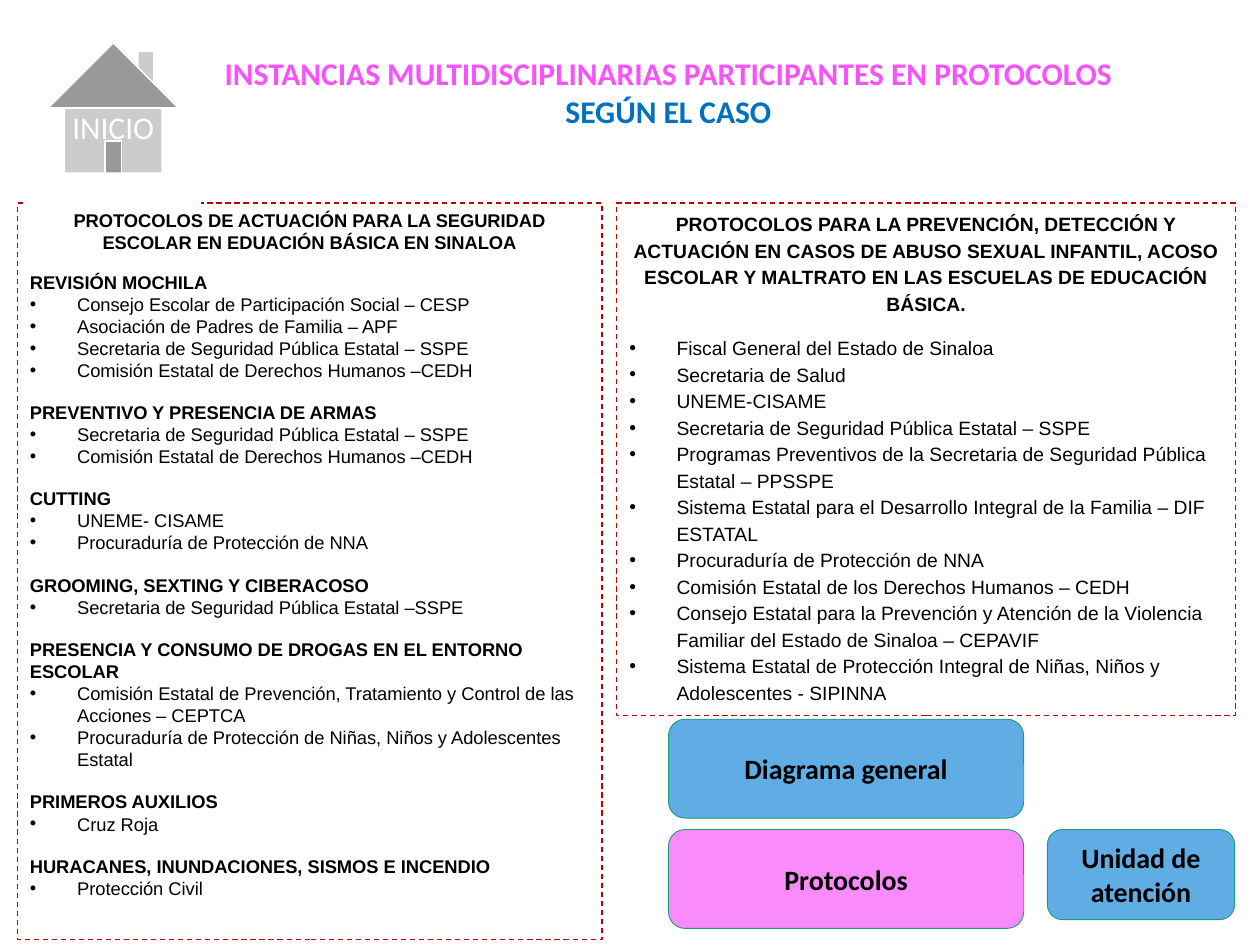
from lxml.etree import SubElement
from pptx import Presentation
from pptx.dml.color import RGBColor
from pptx.enum.dml import MSO_LINE_DASH_STYLE as Dash
from pptx.enum.shapes import MSO_SHAPE as Shape
from pptx.enum.text import MSO_ANCHOR as Anchor, MSO_AUTO_SIZE as AutoSize, PP_ALIGN as Align
from pptx.oxml.ns import qn
from pptx.util import Pt

BLACK, WHITE, RED, GREEN = "000000", "FFFFFF", "C00000", "1D9A78"
PINK, BLUE, SKY, ORCHID = "F852FC", "0070C0", "5FADE4", "FA8BFD"

TITLE = [("INSTANCIAS MULTIDISCIPLINARIAS PARTICIPANTES EN PROTOCOLOS", PINK),
         ("SEGÚN EL CASO", BLUE)]
SAFETY_HEADING = "PROTOCOLOS DE ACTUACIÓN PARA LA SEGURIDAD ESCOLAR EN EDUACIÓN BÁSICA EN SINALOA"
SAFETY = [
    ("REVISIÓN MOCHILA", [
        "Consejo Escolar de Participación Social – CESP",
        "Asociación de Padres de Familia – APF",
        "Secretaria de Seguridad Pública Estatal – SSPE",
        "Comisión Estatal de Derechos Humanos –CEDH"]),
    ("PREVENTIVO Y PRESENCIA DE ARMAS", [
        "Secretaria de Seguridad Pública Estatal – SSPE",
        "Comisión Estatal de Derechos Humanos –CEDH"]),
    ("CUTTING", ["UNEME- CISAME", "Procuraduría de Protección de NNA"]),
    ("GROOMING, SEXTING Y CIBERACOSO", ["Secretaria de Seguridad Pública Estatal –SSPE"]),
    ("PRESENCIA Y CONSUMO DE DROGAS EN EL ENTORNO ESCOLAR", [
        "Comisión Estatal de Prevención, Tratamiento y Control de las Acciones – CEPTCA",
        "Procuraduría de Protección de Niñas, Niños y Adolescentes Estatal"]),
    ("PRIMEROS AUXILIOS", ["Cruz Roja"]),
    ("HURACANES, INUNDACIONES, SISMOS E INCENDIO", ["Protección Civil"]),
]
ABUSE_HEADING = ("PROTOCOLOS PARA LA PREVENCIÓN, DETECCIÓN Y ACTUACIÓN EN CASOS DE ABUSO SEXUAL "
                 "INFANTIL, ACOSO ESCOLAR Y MALTRATO EN LAS ESCUELAS DE EDUCACIÓN BÁSICA.")
ABUSE = [
    "Fiscal General del Estado de Sinaloa",
    "Secretaria de Salud",
    "UNEME-CISAME",
    "Secretaria de Seguridad Pública Estatal – SSPE",
    "Programas Preventivos de la Secretaria de Seguridad Pública Estatal – PPSSPE",
    "Sistema Estatal para el Desarrollo Integral de la Familia – DIF ESTATAL",
    "Procuraduría de Protección de NNA",
    "Comisión Estatal de los Derechos Humanos – CEDH",
    "Consejo Estatal para la Prevención y Atención de la Violencia Familiar del Estado de Sinaloa – CEPAVIF",
    "Sistema Estatal de Protección Integral de Niñas, Niños y Adolescentes - SIPINNA",
]
BUTTONS = [("Diagrama general", SKY, (382, 411, 203, 56.5)),
           ("Unidad de atención", SKY, (598.5, 474, 107, 51.5)),
           ("Protocolos", ORCHID, (382, 474, 203, 56.5))]


def rgb(value):
    """Return the colour for a hex string."""
    return RGBColor.from_string(value)


def add_run(p, text, size, font, color=BLACK, bold=False):
    """Add one formatted run to a paragraph."""
    r = p.add_run()
    r.text = text
    r.font.size, r.font.name, r.font.bold = Pt(size), font, bold
    r.font.color.rgb = rgb(color)


def add_bullet(p, indent=27):
    """Give a paragraph a hanging bullet."""
    pPr = p._p.get_or_add_pPr()
    pPr.set("marL", str(Pt(indent)))
    pPr.set("indent", str(-Pt(indent)))
    SubElement(pPr, qn("a:buFont"), typeface="Arial")
    SubElement(pPr, qn("a:buChar"), char="•")


def add_box(slide, kind, box, line, width, fill=None, anchor=Anchor.MIDDLE):
    """Add a preset shape in the given box."""
    sp = slide.shapes.add_shape(kind, *map(Pt, box))
    sp.shadow.inherit = False
    if fill:
        sp.fill.solid()
        sp.fill.fore_color.rgb = rgb(fill)
    else:
        sp.fill.background()
    sp.line.color.rgb = rgb(line)
    sp.line.width = Pt(width)
    sp.text_frame.word_wrap = True
    sp.text_frame.vertical_anchor = anchor
    return sp


def add_title(slide, box):
    """Place the two-line title."""
    title = slide.shapes.title
    title.left, title.top, title.width, title.height = map(Pt, box)
    tf = title.text_frame
    tf.word_wrap, tf.auto_size, tf.vertical_anchor = True, AutoSize.NONE, Anchor.TOP
    for i, (text, color) in enumerate(TITLE):
        p = tf.add_paragraph() if i else tf.paragraphs[0]
        p.alignment = Align.CENTER
        add_run(p, text, 18, "Calibri", color, True)


def add_panel(slide, box, heading, groups, size, spacing=1.0):
    """Place a dashed panel with a heading and groups of bullets."""
    sp = add_box(slide, Shape.RECTANGLE, box, RED, 0.75, anchor=Anchor.TOP)
    sp.line.dash_style = Dash.DASH
    tf = sp.text_frame
    p = tf.paragraphs[0]
    p.alignment, p.line_spacing, p.space_after = Align.CENTER, spacing, Pt(10)
    add_run(p, heading, size, "Arial", bold=True)
    for i, (subheading, items) in enumerate(groups):
        if subheading:
            p = tf.add_paragraph()
            p.alignment, p.line_spacing = Align.LEFT, spacing
            p.space_before = Pt(11.6 if i else 0)
            add_run(p, subheading, size, "Arial", bold=True)
        for item in items:
            p = tf.add_paragraph()
            add_bullet(p)
            p.alignment, p.line_spacing = Align.LEFT, spacing
            add_run(p, item, size, "Arial")


def add_button(slide, box, text, fill):
    """Place a rounded button with its label."""
    sp = add_box(slide, Shape.ROUNDED_RECTANGLE, box, GREEN, 0.5, fill)
    p = sp.text_frame.paragraphs[0]
    p.alignment = Align.CENTER
    add_run(p, text, 16, "Calibri", bold=True)


def add_home(slide, box):
    """Place the home button with its label on the house front."""
    sp = add_box(slide, Shape.ACTION_BUTTON_HOME, box, WHITE, 1, WHITE)
    sp.text_frame.margin_top = Pt(25.5)
    p = sp.text_frame.paragraphs[0]
    p.alignment = Align.CENTER
    add_run(p, "INICIO", 18, "Calibri", WHITE)


def main():
    """Build the slide and save it."""
    prs = Presentation()
    prs.slide_width, prs.slide_height = Pt(720), Pt(540)
    slide = prs.slides.add_slide(prs.slide_layouts[5])
    add_title(slide, (111, 27.5, 542, 51))
    add_panel(slide, (10, 116, 334, 421), SAFETY_HEADING, SAFETY, 10.5)
    add_panel(slide, (352.5, 116, 353.5, 293), ABUSE_HEADING, [("", ABUSE)], 11, 1.15)
    for text, fill, box in BUTTONS:
        add_button(slide, box, text, fill)
    add_home(slide, (15, 7, 99.5, 109.5))
    prs.save("out.pptx")


if __name__ == "__main__":
    main()
